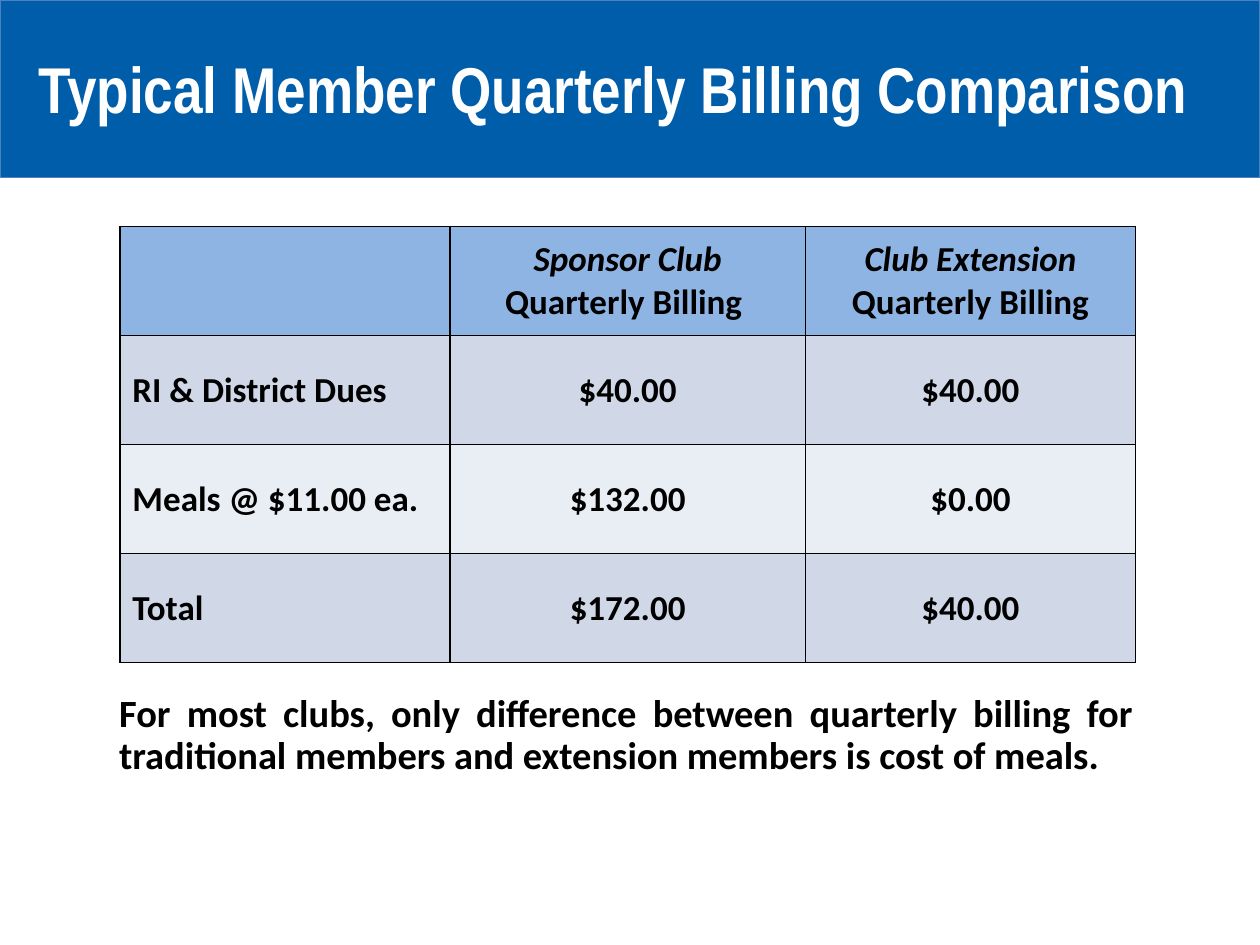
import pptx
import pptx.util
import pptx.dml.color
import pptx.enum.shapes
import pptx.enum.text
from lxml import etree

Pt = pptx.util.Pt
RGB = pptx.dml.color.RGBColor.from_string
ALIGN = pptx.enum.text.PP_ALIGN
ANCHOR = pptx.enum.text.MSO_ANCHOR
A = "http://schemas.openxmlformats.org/drawingml/2006/main"

COLORS = {
    "banner": "005DAA", "banner_edge": "4F81BD", "title": "FFFFFF", "text": "000000",
    "header": "8EB4E3", "band_dark": "D0D8E8", "band_light": "E9EDF4", "border": "000000",
}


def set_font(paragraph, name, size, color, italic=False):
    font = paragraph.font
    font.name, font.size, font.bold, font.italic = name, Pt(size), True, italic
    font.color.rgb = RGB(COLORS[color])


def add_borders(cell):
    properties = cell._tc.get_or_add_tcPr()
    for position, side in enumerate(("lnL", "lnR", "lnT", "lnB")):
        line = etree.Element(f"{{{A}}}{side}", w=str(Pt(1)))
        fill = etree.SubElement(line, f"{{{A}}}solidFill")
        etree.SubElement(fill, f"{{{A}}}srgbClr", val=COLORS["border"])
        properties.insert(position, line)


presentation = pptx.Presentation()
presentation.slide_width, presentation.slide_height = Pt(720), Pt(540)
slide = presentation.slides.add_slide(presentation.slide_layouts[5])

# Title on its banner
title = slide.shapes.title
title.left, title.top, title.width, title.height = Pt(15), Pt(33), Pt(690.5), Pt(51)
heading = title.text_frame
heading.text = "Typical Member Quarterly Billing Comparison"
heading.vertical_anchor = ANCHOR.TOP
heading.word_wrap = True
heading.auto_size = pptx.enum.text.MSO_AUTO_SIZE.NONE
heading.paragraphs[0].alignment = ALIGN.LEFT
heading.paragraphs[0].line_spacing = 0.8
set_font(heading.paragraphs[0], "Arial Narrow", 37, "title")

banner = slide.shapes.add_shape(
    pptx.enum.shapes.MSO_SHAPE.RECTANGLE, 0, 0, Pt(720), Pt(101.5))
banner.shadow.inherit = False
banner.fill.solid()
banner.fill.fore_color.rgb = RGB(COLORS["banner"])
banner.line.color.rgb = RGB(COLORS["banner_edge"])
banner.line.width = Pt(0.75)
title._element.addprevious(banner._element)

# Billing table
billing_rows = [
    ("", "Sponsor Club\nQuarterly Billing ", "Club Extension\nQuarterly Billing"),
    ("RI & District Dues", "$40.00", "$40.00"),
    ("Meals @ $11.00 ea.", "$132.00", "$0.00"),
    ("Total", "$172.00", "$40.00"),
]
row_fills = ["header", "band_dark", "band_light", "band_dark"]
billing = slide.shapes.add_table(4, 3, Pt(68.5), Pt(129.5), Pt(580.5), Pt(249.2)).table
for column, width in zip(billing.columns, (188.7, 203.1, 188.7)):
    column.width = Pt(width)
for r, (labels, row_fill) in enumerate(zip(billing_rows, row_fills)):
    billing.rows[r].height = Pt(62.3)
    for c, label in enumerate(labels):
        cell = billing.cell(r, c)
        cell.text = label
        cell.vertical_anchor = ANCHOR.MIDDLE
        cell.fill.solid()
        cell.fill.fore_color.rgb = RGB(COLORS[row_fill])
        add_borders(cell)
        for line_number, paragraph in enumerate(cell.text_frame.paragraphs):
            paragraph.alignment = ALIGN.CENTER if c else ALIGN.LEFT
            set_font(paragraph, "Calibri", 20, "text", italic=r == 0 and line_number == 0)

# Conclusion below the table
conclusion = slide.shapes.add_textbox(Pt(61), Pt(392.5), Pt(593.5), Pt(55.5)).text_frame
conclusion.word_wrap = True
conclusion.auto_size = pptx.enum.text.MSO_AUTO_SIZE.SHAPE_TO_FIT_TEXT
conclusion.text = ("For most clubs, only difference between quarterly billing for "
                   "traditional members and extension members is cost of meals.")
conclusion.paragraphs[0].alignment = ALIGN.JUSTIFY
conclusion.paragraphs[0].line_spacing = Pt(24)
set_font(conclusion.paragraphs[0], "Calibri", 22, "text")

presentation.save("out.pptx")
